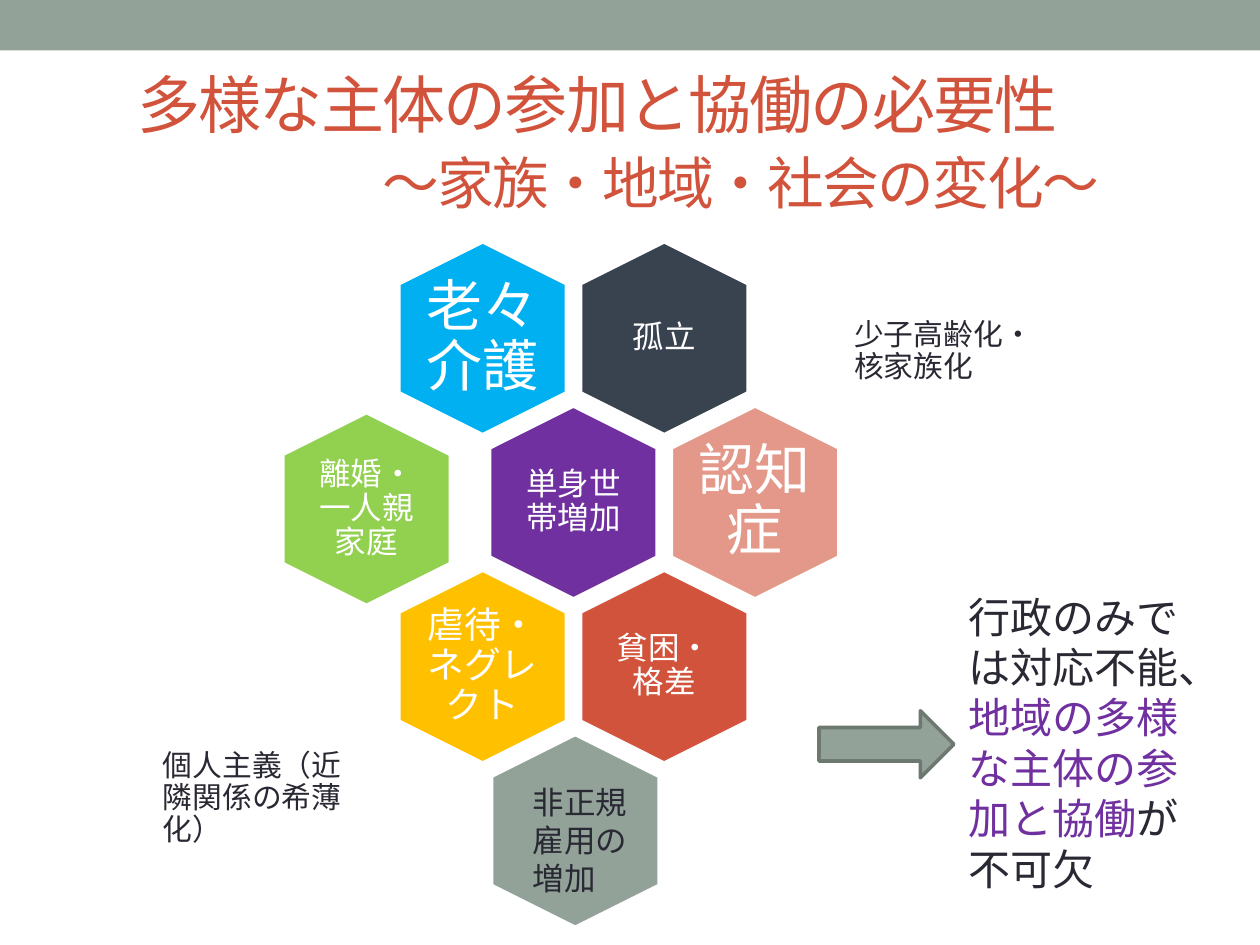
from pptx import Presentation
from pptx.dml.color import RGBColor
from pptx.enum.shapes import MSO_SHAPE
from pptx.enum.text import MSO_ANCHOR, PP_ALIGN
from pptx.util import Cm, Pt

RECTANGLE, HEXAGON, ARROW = MSO_SHAPE.RECTANGLE, MSO_SHAPE.HEXAGON, MSO_SHAPE.RIGHT_ARROW
TOP, MIDDLE = MSO_ANCHOR.TOP, MSO_ANCHOR.MIDDLE
LEFT, CENTER = PP_ALIGN.LEFT, PP_ALIGN.CENTER

FONT = "Arial"
COLORS = {
    "sage": "93A299", "sage_dark": "6D7871", "red": "D2533C", "slate": "394350",
    "blue": "00B0F0", "purple": "7030A0", "pink": "E4988A", "amber": "FFC000",
    "green": "92D050", "ink": "292934", "white": "FFFFFF",
}

# text, size, left indent (cm), line spacing
TITLE = [
    ("多様な主体の参加と協働の必要性", 36, 1.25, 1.0),
    ("～家族・地域・社会の変化～", 32.4, 6.2, 1.1),
]
# column, row, fill, label, size, inset (cm)
HEXAGONS = [
    (1, 0, "slate", "孤立", 18, 0.18),
    (0, 0, "blue", "老々介護", 32, 0),
    (0.5, 1, "purple", "単身世帯増加", 18, 0.18),
    (1.5, 1, "pink", "認知症", 32, 0),
    (1, 2, "red", "貧困・格差", 18, 0.18),
    (0, 2, "amber", "虐待・ネグレクト", 21, 0),
    (-0.64, 1.04, "green", "離婚・一人親家庭", 18, 0.18),
    (0.51, 3, "sage", None, None, None),
]
# left, top, width, height (cm), text
SIDE_NOTES = [
    (17.04, 5.92, 4.34, 2.34, "少子高齢化・核家族化"),
    (3.1, 14.94, 4.37, 2.34, "個人主義（近隣関係の希薄化）"),
]
CONCLUSION = [
    ("行政のみでは対応不能、", "ink"),
    ("地域の多様な主体の参加と協働", "purple"),
    ("が不可欠", "ink"),
]
FIRST_X, FIRST_Y = 9.73, 6.82  # centre of the top left hexagon
STEP_X, STEP_Y = 3.66, 3.31
HEX_LENGTH, HEX_BREADTH = 3.89, 3.38
LABEL_WIDTH, LABEL_HEIGHT = 2.34, 2.69


def rgb(color):
    return RGBColor.from_string(COLORS[color])


def add_figure(page, kind, left, top, width, height, fill, line=None):
    figure = page.shapes.add_shape(kind, Cm(left), Cm(top), Cm(width), Cm(height))
    figure.shadow.inherit = False
    figure.fill.solid()
    figure.fill.fore_color.rgb = rgb(fill)
    if line:
        figure.line.color.rgb = rgb(line)
        figure.line.width = Pt(2.08)
    else:
        figure.line.fill.background()
    return figure


def add_box(page, left, top, width, height, anchor=TOP, inset=None):
    box = page.shapes.add_textbox(Cm(left), Cm(top), Cm(width), Cm(height))
    frame = box.text_frame
    frame.word_wrap = True
    frame.vertical_anchor = anchor
    if inset is not None:
        frame.margin_left = frame.margin_right = Cm(inset)
        frame.margin_top = frame.margin_bottom = Cm(inset)
    return frame


def add_span(para, text, size, color):
    span = para.add_run()
    span.text = text
    span.font.name = FONT
    span.font.size = Pt(size)
    span.font.color.rgb = rgb(color)
    return span


def fill_para(para, text, size, color, align=LEFT, spacing=None):
    para.alignment = align
    para.line_spacing = spacing
    return add_span(para, text, size, color)


def add_title(page):
    frame = add_box(page, 1.27, 1.47, 22.86, 2.74, MIDDLE)
    for index, (text, size, indent, spacing) in enumerate(TITLE):
        para = frame.add_paragraph() if index else frame.paragraphs[0]
        span = fill_para(para, text, size, "red", spacing=spacing)
        para._p.get_or_add_pPr().set("marL", str(Cm(indent)))
        span.font._element.set("spc", "-100")  # letters one point closer


def add_hexagon(page, column, row, fill, label, size, inset):
    x, y = FIRST_X + column * STEP_X, FIRST_Y + row * STEP_Y
    hexagon = add_figure(page, HEXAGON, x - HEX_LENGTH / 2, y - HEX_BREADTH / 2,
                         HEX_LENGTH, HEX_BREADTH, fill, "white")
    hexagon.adjustments[0] = 0.25
    hexagon.adjustments[1] = 1.1547
    hexagon.rotation = 90
    if label:
        frame = add_box(page, x - LABEL_WIDTH / 2, y - LABEL_HEIGHT / 2,
                        LABEL_WIDTH, LABEL_HEIGHT, MIDDLE, inset)
        fill_para(frame.paragraphs[0], label, size, "white", CENTER, 0.9)


def main():
    deck = Presentation()
    deck.slide_width, deck.slide_height = Cm(25.4), Cm(19.05)
    page = deck.slides.add_slide(deck.slide_layouts[6])

    add_figure(page, RECTANGLE, 0, 0, 25.4, 1.02, "sage")
    add_title(page)
    for hexagon in HEXAGONS:
        add_hexagon(page, *hexagon)
    for *place, text in SIDE_NOTES:
        frame = add_box(page, *place, MIDDLE, 0.18)
        fill_para(frame.paragraphs[0], text, 17, "ink", spacing=0.9)

    add_figure(page, ARROW, 16.51, 14.33, 2.72, 1.35, "sage", "sage_dark")
    conclusion = add_box(page, 19.28, 11.79, 5, 6.4).paragraphs[0]
    for text, color in CONCLUSION:
        add_span(conclusion, text, 24, color)
    employment = add_box(page, 10.49, 15.67, 2.79, 2.57).paragraphs[0]
    add_span(employment, "非正規雇用の増加", 18, "ink")

    deck.save("out.pptx")


if __name__ == "__main__":
    main()
